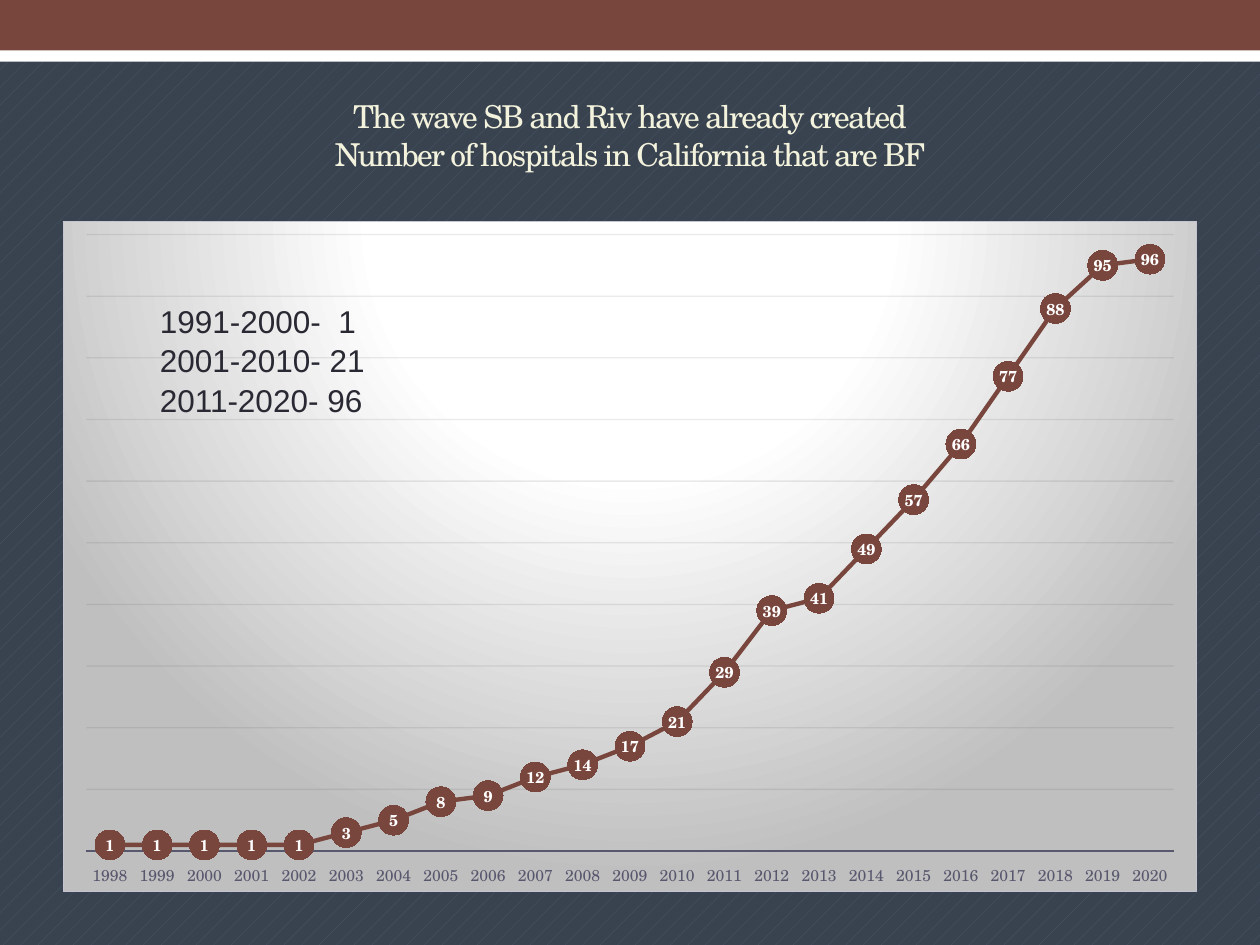
from lxml import etree
from pptx import Presentation
from pptx.chart.data import CategoryChartData
from pptx.dml.color import RGBColor
from pptx.enum.chart import (XL_CHART_TYPE, XL_LABEL_POSITION,
                             XL_MARKER_STYLE, XL_TICK_LABEL_POSITION,
                             XL_TICK_MARK)
from pptx.enum.dml import MSO_PATTERN
from pptx.enum.shapes import MSO_SHAPE
from pptx.enum.text import MSO_ANCHOR, PP_ALIGN
from pptx.oxml import parse_xml
from pptx.oxml.ns import qn
from pptx.util import Inches, Pt

RECT, DOTS = MSO_SHAPE.RECTANGLE, MSO_PATTERN.PERCENT_5
LINE, ROUND = XL_CHART_TYPE.LINE_MARKERS, XL_MARKER_STYLE.CIRCLE
MIDDLE, CENTER = MSO_ANCHOR.MIDDLE, PP_ALIGN.CENTER
ON_DOT, NO_TICK = XL_LABEL_POSITION.CENTER, XL_TICK_MARK.NONE
LOW = XL_TICK_LABEL_POSITION.LOW

SERIF, SANS = "TeX Gyre Schola", "Arial"
RUST, WHITE, CREAM = "79463D", "FFFFFF", "F3F2DC"
SLATE, INK, GRID = "57576E", "292934", "323240"

TITLE = ["The wave SB and Riv have already created",
         "Number of hospitals in California that are BF"]
TOTALS = ["1991-2000-  1", "2001-2010- 21", "2011-2020- 96"]
FIRST_YEAR = 1998
COUNTS = [1, 1, 1, 1, 1, 3, 5, 8, 9, 12, 14, 17, 21, 29, 39, 41, 49, 57, 66,
          77, 88, 95, 96]
BANDS = [(0.24, 0.25, WHITE), (0, 0.4, RUST)]  # top, height, colour
PLOT = {"x": 0.02, "y": 0.02, "w": 0.96, "h": 0.92}  # shares of the chart

WIDE, HIGH, EDGE = 10, 7.5, 0.5
INNER = WIDE - 2 * EDGE

NS = ('xmlns:a="http://schemas.openxmlformats.org/drawingml/2006/main" '
      'xmlns:c="http://schemas.openxmlformats.org/drawingml/2006/chart"')
STOPS = [(0, WHITE), (39, WHITE), (100, "BFBFBF")]


def rgb(code):
    return RGBColor.from_string(code)


def box(*sides):
    return [Inches(side) for side in sides]


def style(font, size, color, face=SERIF, bold=False):
    font.size, font.name, font.bold = Pt(size), face, bold
    font.color.rgb = rgb(color)


def stroke(line, color, width):
    line.color.rgb = rgb(color)
    line.width = Pt(width)


def write(slide, place, lines, size, color, face):
    """Add a text box with one paragraph per line."""
    frame = slide.shapes.add_textbox(*box(*place)).text_frame
    frame.word_wrap = True
    frame.text = "\n".join(lines)
    for para in frame.paragraphs:
        style(para.font, size, color, face)
    return frame


def add_bands(slide):
    for top, high, color in BANDS:
        band = slide.shapes.add_shape(RECT, *box(0, top, WIDE, high))
        band.shadow.inherit = False
        band.fill.solid()
        band.fill.fore_color.rgb = rgb(color)
        band.line.fill.background()


def add_title(slide):
    frame = write(slide, (EDGE, 0.75, INNER, 0.64), TITLE, 18, CREAM, SERIF)
    frame.vertical_anchor = MIDDLE
    for para in frame.paragraphs:
        para.alignment = CENTER
        para.runs[0].font._element.set("spc", "-100")


def paint_back(chart):
    """Give the chart area a radial gradient and a thin border."""
    stops = "".join(f'<a:gs pos="{pos * 1000}"><a:srgbClr val="{color}"/></a:gs>'
                    for pos, color in STOPS)
    props = parse_xml(
        f'<c:spPr {NS}><a:gradFill><a:gsLst>{stops}</a:gsLst>'
        '<a:path path="circle"><a:fillToRect l="50000" t="-80000" r="50000" '
        'b="180000"/></a:path></a:gradFill><a:ln w="9525"><a:solidFill>'
        '<a:srgbClr val="C5C5D1"/></a:solidFill></a:ln></c:spPr>')
    chart._chartSpace.find(qn("c:chart")).addnext(props)


def place_plot(chart):
    area = chart._chartSpace.find(qn("c:chart")).find(qn("c:plotArea"))
    for old in area.findall(qn("c:layout")):
        area.remove(old)
    rules = '<c:layoutTarget val="inner"/>'
    rules += "".join(f'<c:{side}Mode val="edge"/>' for side in "xy")
    rules += "".join(f'<c:{key} val="{val}"/>' for key, val in PLOT.items())
    area.insert(0, parse_xml(f'<c:layout {NS}><c:manualLayout>{rules}'
                             '</c:manualLayout></c:layout>'))


def style_axes(chart):
    years, scale = chart.category_axis, chart.value_axis
    years.major_tick_mark = years.minor_tick_mark = NO_TICK
    years.tick_label_position = LOW
    style(years.tick_labels.font, 9, SLATE)
    stroke(years.format.line, SLATE, 1.5)
    scale.minimum_scale, scale.maximum_scale, scale.major_unit = 0, 100, 10
    scale.has_major_gridlines = True
    line = scale.major_gridlines.format.line
    stroke(line, GRID, 0.75)
    tint = scale.major_gridlines._xAx.find(".//" + qn("a:srgbClr"))
    etree.SubElement(tint, qn("a:alpha")).set("val", "10000")
    scale.visible = False


def style_series(plot):
    plot.vary_by_categories = False
    series = plot.series[0]
    series.smooth = False
    stroke(series.format.line, RUST, 2.5)
    dot = series.marker
    dot.style, dot.size = ROUND, 17
    dot.format.fill.solid()
    dot.format.fill.fore_color.rgb = rgb(RUST)
    dot.format.line.fill.background()
    labels = series.data_labels
    labels.show_value, labels.position = True, ON_DOT
    style(labels.font, 9, WHITE, bold=True)


def add_counts(slide):
    data = CategoryChartData()
    data.categories = [str(FIRST_YEAR + step) for step in range(len(COUNTS))]
    data.add_series("Series 1", COUNTS)
    place = box(EDGE, 1.75, INNER, 5.33)
    chart = slide.shapes.add_chart(LINE, *place, data).chart
    chart.has_legend = chart.has_title = False
    style(chart.font, 10, WHITE)
    paint_back(chart)
    place_plot(chart)
    style_axes(chart)
    style_series(chart.plots[0])


def main():
    deck = Presentation()
    deck.slide_width, deck.slide_height = box(WIDE, HIGH)
    slide = deck.slides.add_slide(deck.slide_layouts[6])
    back = slide.background.fill
    back.patterned()
    back.pattern = DOTS
    back.fore_color.rgb, back.back_color.rgb = rgb("4C5A6A"), rgb("394350")
    add_bands(slide)
    add_title(slide)
    add_counts(slide)
    frame = write(slide, (1.17, 2.33, 3.42, 1.01), TOTALS, 18, INK, SANS)
    for para in frame.paragraphs:
        para.line_spacing = 1.05
    deck.save("out.pptx")


if __name__ == "__main__":
    main()
